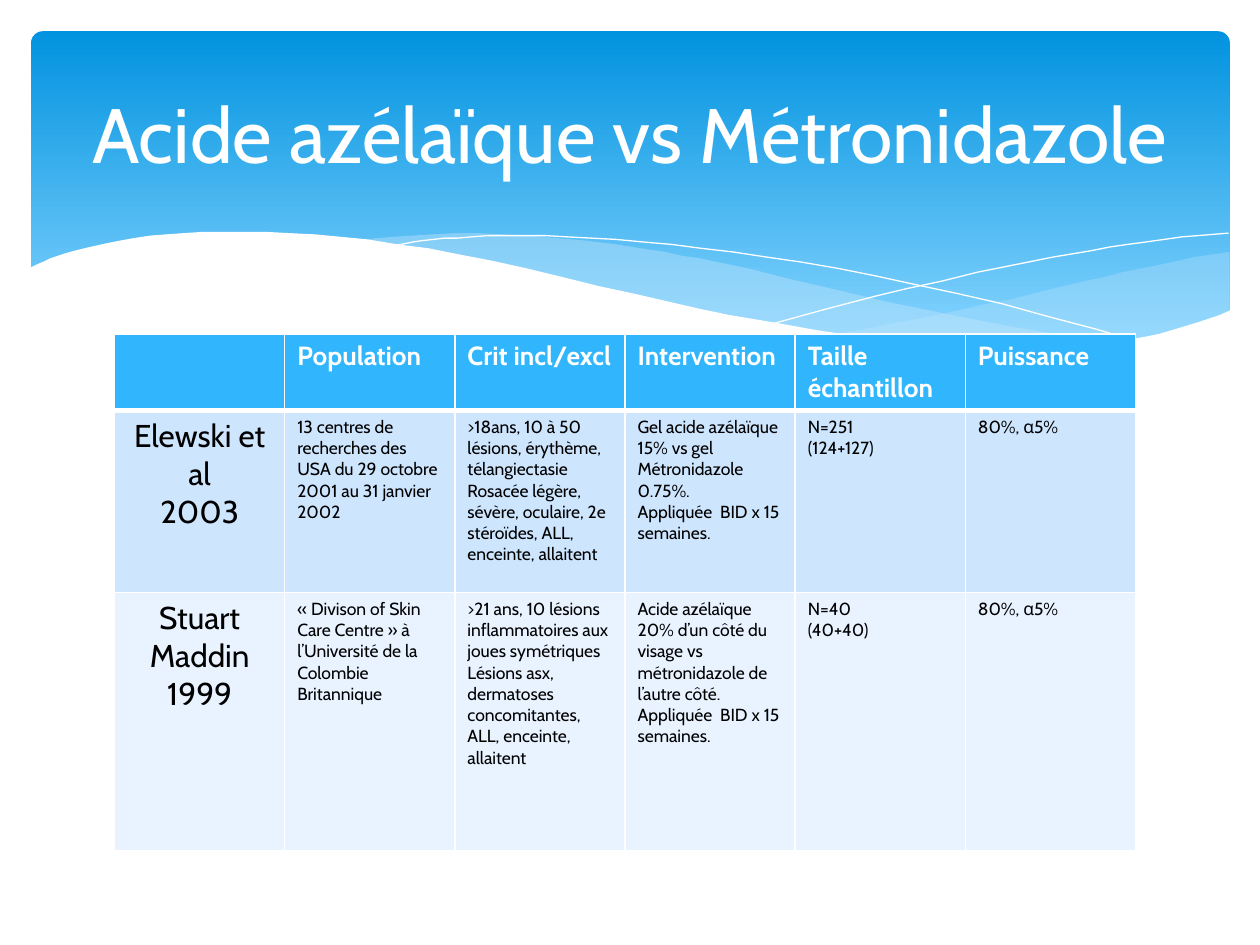
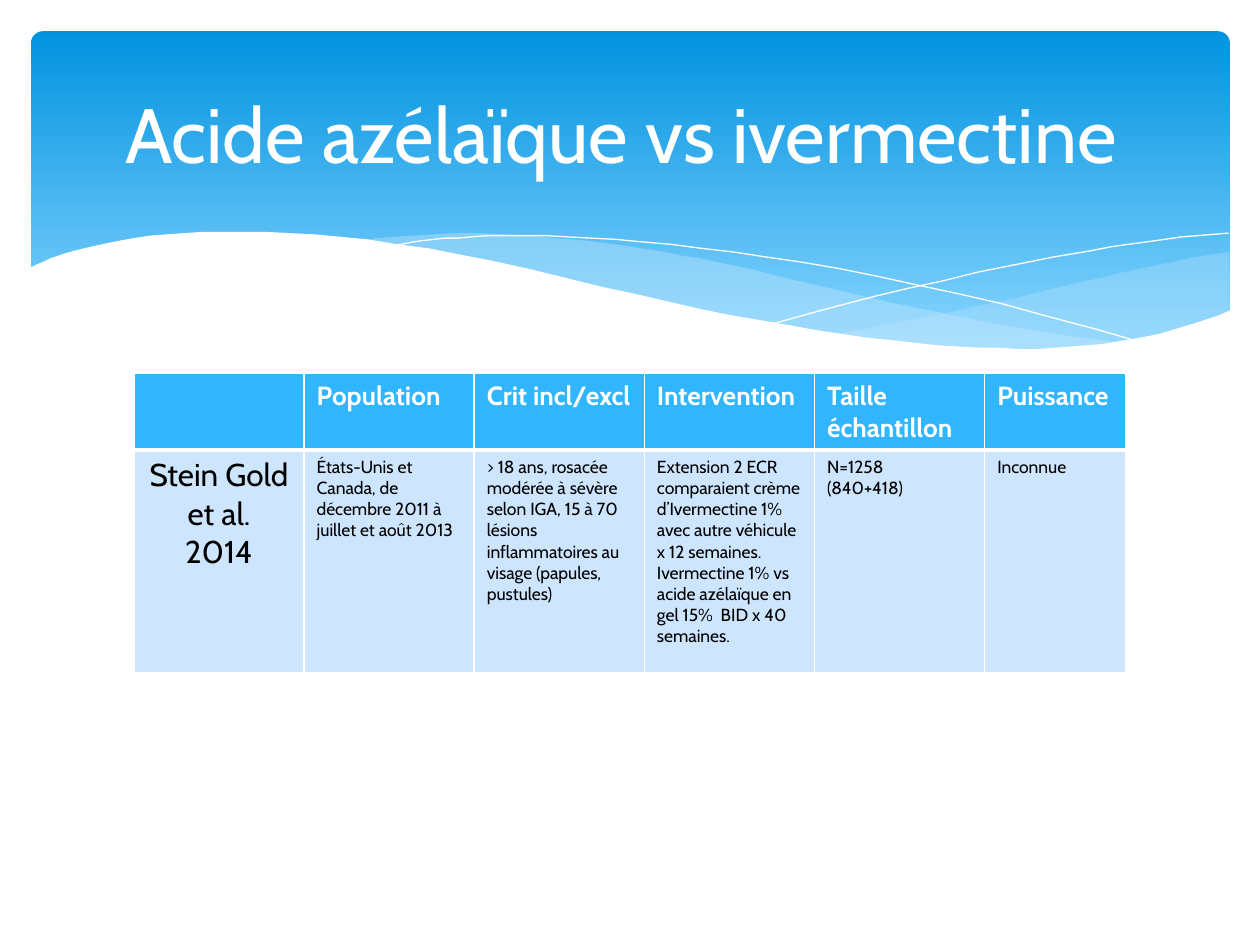
"""Builds two slides comparing azelaic acid trials, on a shared wave banner."""
from dataclasses import dataclass

from lxml.etree import SubElement
from pptx import Presentation
from pptx.dml.color import RGBColor as Rgb
from pptx.enum.shapes import MSO_SHAPE as Preset
from pptx.enum.text import MSO_ANCHOR as Anchor, PP_ALIGN as Align
from pptx.oxml.ns import qn
from pptx.util import Cm, Pt


@dataclass(frozen=True)
class Theme:
    font: str = "Cabin"
    white: Rgb = Rgb(0xFF, 0xFF, 0xFF)
    black: Rgb = Rgb(0, 0, 0)
    banner_top: Rgb = Rgb(0x02, 0x93, 0xE0)
    banner_bottom: Rgb = Rgb(0x83, 0xD3, 0xFE)
    ribbon: Rgb = Rgb(0xC6, 0xE7, 0xFC)
    header: Rgb = Rgb(0x31, 0xB6, 0xFD)
    bands: tuple = (Rgb(0xCE, 0xE5, 0xFE), Rgb(0xE8, 0xF3, 0xFF))
    title_size: int = 44
    study_size: int = 18
    header_size: int = 15
    body_size: int = 10


theme = Theme()

RIGHT_RIBBON = [
    (975, 200), (962, 202), (948, 204), (935, 207), (921, 210), (906, 213), (891, 216),
    (876, 220), (861, 223), (832, 230), (805, 237), (779, 242), (753, 248), (729, 253),
    (706, 257), (683, 262), (661, 265), (676, 267), (691, 269), (705, 271), (719, 272),
    (732, 274), (745, 275), (757, 276), (769, 277), (792, 277), (803, 278), (814, 278),
    (824, 277), (844, 277), (854, 276), (863, 275), (872, 274), (881, 273), (889, 272),
    (897, 270), (905, 269), (913, 267), (921, 265), (928, 263), (935, 262), (942, 259),
    (949, 257), (963, 252), (976, 247), (976, 200)]
MIDDLE_RIBBON = [
    (893, 273), (880, 271), (866, 269), (837, 265), (807, 260), (775, 254), (741, 247),
    (706, 240), (668, 231), (629, 222), (613, 218), (598, 214), (584, 211), (569, 208),
    (555, 205), (541, 203), (528, 200), (514, 198), (502, 196), (489, 194), (465, 191),
    (442, 189), (420, 187), (399, 186), (380, 185), (361, 185), (344, 186), (328, 187),
    (313, 188), (299, 189), (286, 191), (304, 194), (323, 196), (342, 199), (362, 203),
    (383, 207), (404, 211), (427, 216), (449, 222), (491, 232), (530, 240), (566, 248),
    (584, 252), (601, 255), (618, 258), (634, 261), (650, 264), (665, 266), (680, 268),
    (695, 270), (709, 272), (722, 274), (736, 275), (748, 276), (761, 277), (773, 277),
    (785, 278), (838, 278), (848, 277), (857, 277), (867, 276), (876, 275), (884, 274)]
FALLING_LINE = [
    (309, 195), (311, 195), (318, 194), (328, 192), (335, 191), (344, 190), (353, 189),
    (363, 189), (374, 188), (387, 187), (433, 187), (450, 188), (469, 189), (489, 190),
    (510, 192), (533, 194), (556, 197), (582, 200), (608, 204), (636, 208), (665, 213),
    (695, 219), (727, 226), (760, 233), (795, 241), (831, 251), (869, 261), (907, 272)]
RISING_LINE = [
    (613, 257), (624, 254), (653, 246), (672, 241), (695, 235), (720, 229), (748, 223),
    (776, 216), (806, 210), (836, 204), (866, 199), (881, 196), (895, 194), (910, 192),
    (924, 190), (938, 188), (951, 187), (963, 186), (975, 185)]
WHITE_WAVE = [
    (977, 246), (968, 250), (959, 253), (950, 256), (940, 259), (930, 262), (920, 265),
    (910, 267), (899, 269), (887, 271), (875, 273), (863, 274), (850, 275), (837, 276),
    (823, 277), (809, 277), (793, 276), (778, 276), (761, 275), (744, 274), (726, 272),
    (708, 270), (688, 268), (668, 265), (648, 262), (626, 258), (603, 254), (579, 250),
    (555, 245), (529, 239), (503, 233), (475, 227), (447, 220), (418, 213), (391, 207),
    (365, 202), (340, 197), (316, 194), (292, 190), (271, 188), (250, 186), (230, 185),
    (211, 184), (161, 184), (146, 185), (132, 186), (119, 187), (106, 189), (95, 191),
    (85, 193), (76, 195), (67, 197), (59, 199), (52, 201), (46, 203), (40, 205),
    (36, 207), (29, 210), (25, 212), (23, 213), (23, 329), (977, 329)]

HEADINGS = ["", "Population", "Crit incl/excl", "Intervention", "Taille échantillon", "Puissance"]
COLUMN = 3.43
HEADER_HEIGHT = 1.54

comparisons = [
    dict(
        title="Acide azélaïque vs Métronidazole",
        left=2.31, top=6.73, last_column=COLUMN, row_heights=[3.67, 5.21],
        studies=[
            ["Elewski et al\n2003",
             "13 centres de recherches des USA du 29 octobre 2001 au 31 janvier 2002",
             ">18ans, 10 à 50 lésions, érythème, télangiectasie\n"
             "Rosacée légère, sévère, oculaire, 2e stéroïdes, ALL, enceinte, allaitent",
             "Gel acide azélaïque 15% vs gel Métronidazole 0.75%.\n"
             "Appliquée  BID x 15 semaines.",
             "N=251\n(124+127)",
             "80%, α5%"],
            ["Stuart Maddin\n1999",
             "« Divison of Skin Care Centre » à l’Université de la Colombie Britannique",
             ">21 ans, 10 lésions inflammatoires aux joues symétriques\n"
             "Lésions asx, dermatoses concomitantes, ALL, enceinte, allaitent",
             "Acide azélaïque 20% d’un côté du visage vs métronidazole de l’autre côté.\n"
             "Appliquée  BID x 15 semaines.",
             "N=40\n(40+40)",
             "80%, α5%"],
        ]),
    dict(
        title="Acide azélaïque vs ivermectine ",
        left=2.7, top=7.53, last_column=2.84, row_heights=[4.5],
        studies=[
            ["Stein Gold et al.\n2014",
             "États-Unis et Canada, de décembre 2011 à juillet et août 2013",
             "> 18 ans, rosacée modérée à sévère selon IGA, 15 à 70 lésions "
             "inflammatoires au visage (papules, pustules)",
             "Extension 2 ECR comparaient crème d’Ivermectine 1% avec autre véhicule "
             "x 12 semaines.\n"
             "Ivermectine 1% vs acide azélaïque en gel 15%  BID x 40 semaines.",
             "N=1258\n(840+418)",
             "Inconnue"],
        ]),
]


def write(frame, text, size=theme.body_size, color=theme.black, bold=False, align=Align.LEFT):
    for number, line in enumerate(text.split("\n")):
        paragraph = frame.add_paragraph() if number else frame.paragraphs[0]
        paragraph.alignment = align
        run = paragraph.add_run()
        run.text = line
        run.font.name = theme.font
        run.font.size = Pt(size)
        run.font.bold = bold
        run.font.color.rgb = color


def add_borders(cell, top, bottom):
    properties = cell._tc.get_or_add_tcPr()
    for position, (side, width) in enumerate(zip("LRTB", (1, 1, top, bottom))):
        border = SubElement(properties, qn(f"a:ln{side}"), w=str(Pt(width)))
        color = SubElement(SubElement(border, qn("a:solidFill")), qn("a:srgbClr"))
        color.set("val", str(theme.white))
        properties.insert(position, border)


deck = Presentation()
deck.slide_width, deck.slide_height = Cm(25.4), Cm(19.05)
layout = deck.slide_layouts[5]
slides = [deck.slides.add_slide(layout) for _ in comparisons]
canvas = slides[0].shapes

banner = canvas.add_shape(Preset.ROUNDED_RECTANGLE, Cm(0.63), Cm(0.63), Cm(24.16), Cm(6.86))
banner.adjustments[0] = 0.034
banner.line.fill.background()
banner.fill.gradient()
banner.fill.gradient_angle = 270
for stop, position, color in zip(banner.fill.gradient_stops, (0, 0.9),
                                 (theme.banner_top, theme.banner_bottom)):
    stop.position = position
    stop.color.rgb = color

decor = [banner]
for points, fill, opacity in [
        (RIGHT_RIBBON, theme.ribbon, 29),
        (MIDDLE_RIBBON, theme.ribbon, 40),
        (FALLING_LINE, None, 100),
        (RISING_LINE, None, 100),
        (WHITE_WAVE, theme.white, 100)]:
    builder = canvas.build_freeform(*points[0], scale=Cm(2.54) / 100)
    builder.add_line_segments(points[1:], close=fill is not None)
    wave = builder.convert_to_shape()
    if fill is None:
        wave.fill.background()
        wave.line.color.rgb = theme.white
        wave.line.width = Pt(0)
    else:
        wave.fill.solid()
        wave.fill.fore_color.rgb = fill
        wave.line.fill.background()
        if opacity < 100:
            tint = wave.element.find(".//" + qn("a:srgbClr"))
            SubElement(tint, qn("a:alpha"), val=str(opacity * 1000))
    decor.append(wave)

for depth, part in enumerate(decor, start=2):
    part.shadow.inherit = False
    layout.shapes.element.insert(depth, part.element)

for slide, comparison in zip(slides, comparisons):
    title = slide.shapes.title
    title.left, title.top, title.width, title.height = Cm(1.27), Cm(0.94), Cm(22.86), Cm(3.48)
    title.text_frame.vertical_anchor = Anchor.MIDDLE
    write(title.text_frame, comparison["title"], size=theme.title_size,
          color=theme.white, align=Align.CENTER)

    rows = [HEADINGS] + comparison["studies"]
    heights = [HEADER_HEIGHT] + comparison["row_heights"]
    widths = [COLUMN] * (len(HEADINGS) - 1) + [comparison["last_column"]]
    trials = slide.shapes.add_table(
        len(rows), len(widths), Cm(comparison["left"]), Cm(comparison["top"]),
        Cm(sum(widths)), Cm(sum(heights))).table
    for column, width in zip(trials.columns, widths):
        column.width = Cm(width)
    for r, (texts, height) in enumerate(zip(rows, heights)):
        trials.rows[r].height = Cm(height)
        for c, text in enumerate(texts):
            cell = trials.cell(r, c)
            cell.fill.solid()
            cell.fill.fore_color.rgb = theme.bands[(r - 1) % 2] if r else theme.header
            add_borders(cell, top=3 if r == 1 else 1, bottom=1 if r else 3)
            if r == 0:
                write(cell.text_frame, text, size=theme.header_size, color=theme.white, bold=True)
            elif c == 0:
                write(cell.text_frame, text, size=theme.study_size, align=Align.CENTER)
            else:
                write(cell.text_frame, text)

deck.save("out.pptx")
